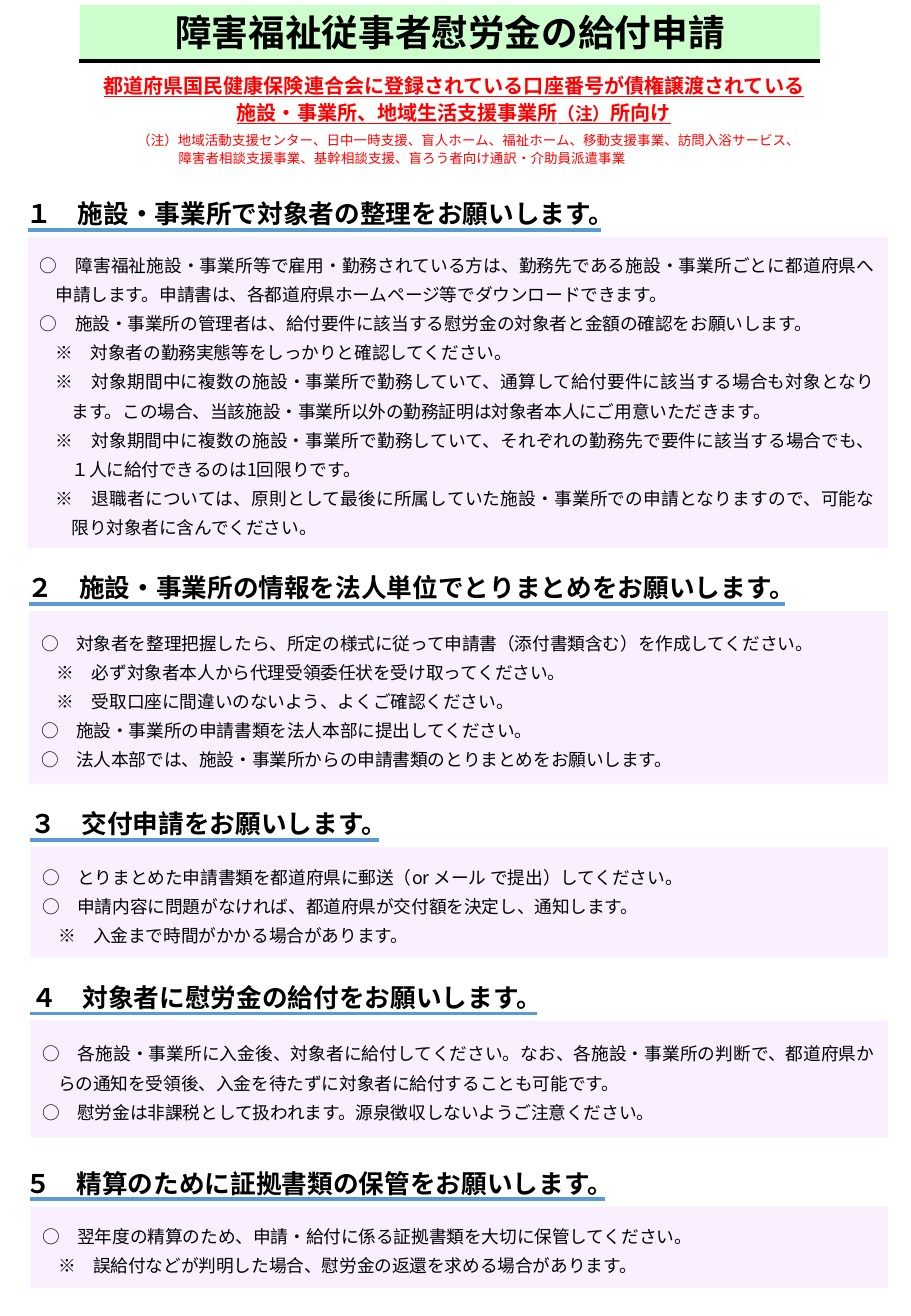
from pptx import Presentation
from pptx.dml.color import RGBColor
from pptx.enum.shapes import MSO_CONNECTOR as CONN, MSO_SHAPE as SHAPE
from pptx.enum.text import MSO_ANCHOR as ANCHOR, PP_ALIGN as ALIGN
from pptx.oxml.ns import qn
from pptx.util import Inches, Pt
from lxml import etree

FONT = "Noto Sans CJK JP"
COLORS = {"black": "000000", "red": "FF0000", "blue": "5B9BD5",
          "lilac": "F9EFFF", "green": "CCFFCC"}
HANG = 0.13  # hanging indent of one list level, in inches


def color(name):
    return RGBColor.from_string(COLORS[name])


def add_run(p, text, size=10.5, ink="black", bold=False, underline=False):
    r = p.add_run()
    r.text = text
    r.font.size, r.font.name = Pt(size), FONT
    r.font.bold, r.font.underline = bold, underline
    r.font.color.rgb = color(ink)
    etree.SubElement(r._r.get_or_add_rPr(), qn("a:ea")).set("typeface", FONT)
    return r


def format_par(p, align=ALIGN.LEFT, left=0, first=0, line=None, before=0):
    p.alignment = align
    p.space_before = Pt(before)
    if line:
        p.line_spacing = Pt(line)
    pPr = p._p.get_or_add_pPr()
    pPr.set("marL", str(Inches(left)))
    pPr.set("indent", str(Inches(first)))


class Flyer:
    def __init__(self, s):
        self.s = s

    def frame(self, sp, inset=(0.1, 0.05)):
        tf = sp.text_frame
        tf.word_wrap = True
        tf.vertical_anchor = ANCHOR.MIDDLE
        tf.margin_left = tf.margin_right = Inches(inset[0])
        tf.margin_top = tf.margin_bottom = Inches(inset[1])
        return tf

    def text_box(self, x, y, w, h, **kw):
        sp = self.s.shapes.add_textbox(Inches(x), Inches(y), Inches(w), Inches(h))
        return self.frame(sp, **kw)

    def panel(self, x, y, w, h, fill, **kw):
        sp = self.s.shapes.add_shape(SHAPE.RECTANGLE, Inches(x), Inches(y),
                                     Inches(w), Inches(h))
        sp.shadow.inherit = False
        sp.fill.solid()
        sp.fill.fore_color.rgb = color(fill)
        sp.line.fill.background()
        return self.frame(sp, **kw)

    def rule(self, x1, x2, y, ink):
        c = self.s.shapes.add_connector(CONN.STRAIGHT, Inches(x1), Inches(y),
                                        Inches(x2), Inches(y))
        c.line.color.rgb = color(ink)
        c.line.width = Pt(2.25)
        etree.SubElement(c._element.spPr, qn("a:effectLst"))

    def items(self, tf, texts):
        for i, text in enumerate(texts):
            p = tf.add_paragraph() if i else tf.paragraphs[0]
            level = 2 if text.startswith("※") else 1
            format_par(p, ALIGN.JUSTIFY, level * HANG, -HANG, 17.3)
            add_run(p, text)

    def section(self, heading, texts, head_x, x1, x2, y, height):
        tf = self.text_box(head_x, y - 0.42, x2 - head_x + 0.7, 0.57)
        add_run(tf.paragraphs[0], heading, size=15.2, bold=True)
        self.rule(x1, x2, y, "blue")
        self.items(self.panel(x1, y + 0.06, 7.31 - x1, height, "lilac"), texts)


# Heading, items, heading left, rule left, rule right, rule top, panel height
SECTIONS = [
    ("１　施設・事業所で対象者の整理をお願いします。", [
        "○　障害福祉施設・事業所等で雇用・勤務されている方は、勤務先である施設・事業所ごとに都道府県へ申請します。申請書は、各都道府県ホームページ等でダウンロードできます。",
        "○　施設・事業所の管理者は、給付要件に該当する慰労金の対象者と金額の確認をお願いします。",
        "※　対象者の勤務実態等をしっかりと確認してください。",
        "※　対象期間中に複数の施設・事業所で勤務していて、通算して給付要件に該当する場合も対象となります。この場合、当該施設・事業所以外の勤務証明は対象者本人にご用意いただきます。",
        "※　対象期間中に複数の施設・事業所で勤務していて、それぞれの勤務先で要件に該当する場合でも、１人に給付できるのは1回限りです。",
        "※　退職者については、原則として最後に所属していた施設・事業所での申請となりますので、可能な限り対象者に含んでください。",
    ], 0.12, 0.23, 4.95, 1.89, 2.56),
    ("２　施設・事業所の情報を法人単位でとりまとめをお願いします。", [
        "○　対象者を整理把握したら、所定の様式に従って申請書（添付書類含む）を作成してください。",
        "※　必ず対象者本人から代理受領委任状を受け取ってください。",
        "※　受取口座に間違いのないよう、よくご確認ください。",
        "○　施設・事業所の申請書類を法人本部に提出してください。",
        "○　法人本部では、施設・事業所からの申請書類のとりまとめをお願いします。",
    ], 0.13, 0.24, 6.46, 4.97, 1.42),
    ("３　交付申請をお願いします。", [
        "○　とりまとめた申請書類を都道府県に郵送（or メール で提出）してください。",
        "○　申請内容に問題がなければ、都道府県が交付額を決定し、通知します。",
        "※　入金まで時間がかかる場合があります。",
    ], 0.15, 0.25, 3.12, 6.91, 0.91),
    ("４　対象者に慰労金の給付をお願いします。", [
        "○　各施設・事業所に入金後、対象者に給付してください。なお、各施設・事業所の判断で、都道府県からの通知を受領後、入金を待たずに対象者に給付することも可能です。",
        "○　慰労金は非課税として扱われます。源泉徴収しないようご注意ください。",
    ], 0.16, 0.25, 4.42, 8.34, 0.96),
    ("５　精算のために証拠書類の保管をお願いします。", [
        "○　翌年度の精算のため、申請・給付に係る証拠書類を大切に保管してください。",
        "※　誤給付などが判明した場合、慰労金の返還を求める場合があります。",
    ], 0.11, 0.25, 4.98, 9.87, 0.67),
]


def main():
    prs = Presentation()
    prs.slide_width, prs.slide_height = Inches(7.5), Inches(10.83)
    flyer = Flyer(prs.slides.add_slide(prs.slide_layouts[6]))

    # Title band
    p = flyer.panel(0.66, 0.04, 6.09, 0.45, "green", inset=(0.08, 0.04)).paragraphs[0]
    format_par(p, ALIGN.CENTER)
    add_run(p, "障害福祉従事者慰労金の給付申請", size=21.7, bold=True)
    flyer.rule(0.65, 6.75, 0.5, "black")

    # Target readers and note
    tf = flyer.text_box(0.69, 0.52, 6.09, 0.91, inset=(0.11, 0.05))
    p = tf.paragraphs[0]
    format_par(p, ALIGN.CENTER, line=16)
    for text, size in [
        ("都道府県国民健康保険連合会に登録されている口座番号が債権譲渡されている施設・事業所、地域生活支援事業所", 11.9),
        ("（注）", 10.5),
        ("所向け", 11.9),
    ]:
        add_run(p, text, size=size, ink="red", bold=True, underline=True)
    for text, left, before in [
        ("（注）地域活動支援センター、日中一時支援、盲人ホーム、福祉ホーム、移動支援事業、訪問入浴サービス、", 0.33, 3),
        ("障害者相談支援事業、基幹相談支援、盲ろう者向け通訳・介助員派遣事業", 0.67, 0),
    ]:
        p = tf.add_paragraph()
        format_par(p, left=left, line=11, before=before)
        add_run(p, text, size=8, ink="red")

    # Five steps
    for section in SECTIONS:
        flyer.section(*section)

    prs.save("out.pptx")


if __name__ == "__main__":
    main()
